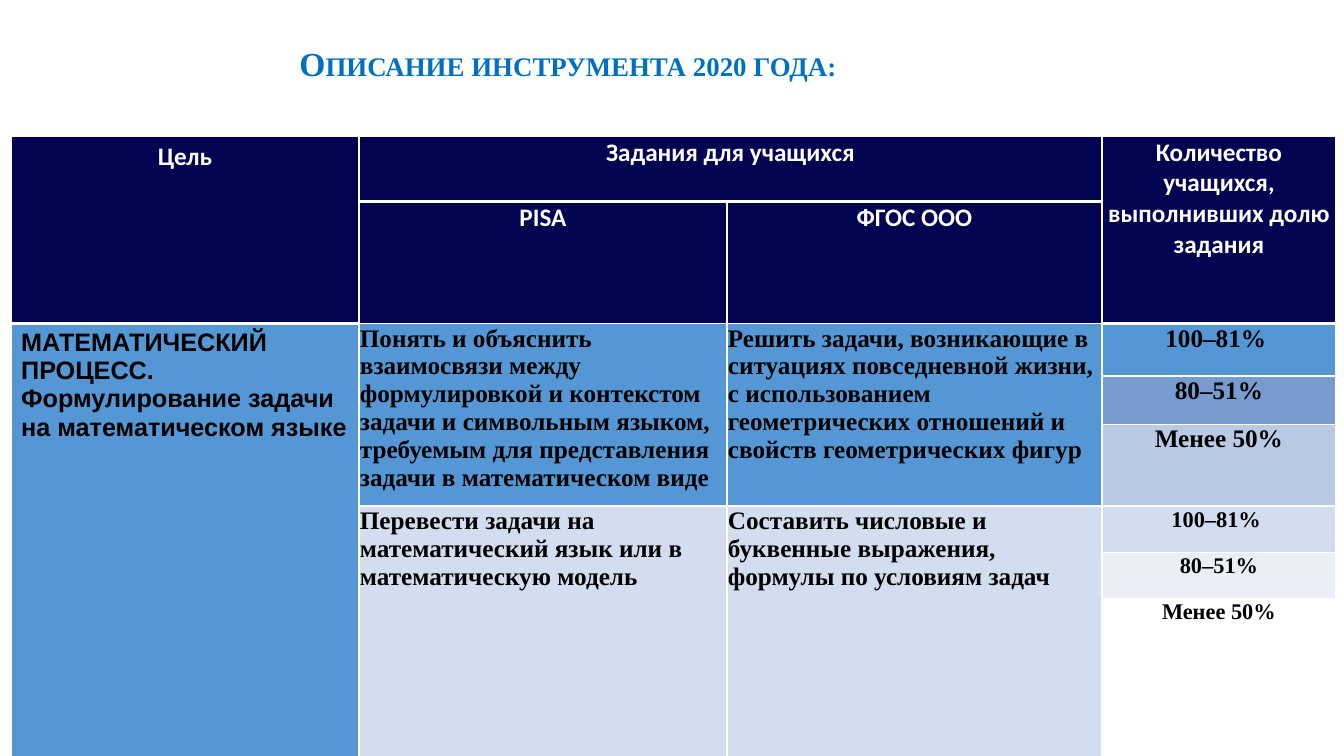
from lxml.etree import SubElement
from pptx import Presentation
from pptx.dml.color import RGBColor
from pptx.enum.text import MSO_ANCHOR, MSO_AUTO_SIZE, PP_ALIGN
from pptx.oxml.ns import qn
from pptx.util import Inches, Pt

TITLE = "Описание инструмента 2020 года:"
COLS = [3.45, 3.65, 3.72, 2.32]
ROWS = [0.65, 0.32, 0.52, 0.48, 0.59, 0.46, 0.46, 1.66]
NAVY, BLUE, PALE = "020452", "5497D4", "D2DEEF"
SERIF = "Times New Roman"
WIDE, TIGHT = (0.1, 0.05, 0.1, 0.05), (0.01, 0.01, 0.01, 0)

# row, column, rows spanned, columns spanned, fill, text
HEADERS = [
    (0, 0, 2, 1, NAVY, "Цель"),
    (0, 1, 1, 2, NAVY, "Задания для учащихся"),
    (0, 3, 2, 1, NAVY, "Количество учащихся, выполнивших долю задания"),
    (1, 1, 1, 1, NAVY, "PISA"),
    (1, 2, 1, 1, NAVY, "ФГОС ООО"),
]
GOAL = (2, 0, 6, 1, BLUE, "МАТЕМАТИЧЕСКИЙ ПРОЦЕСС.\n"
        "Формулирование задачи на математическом языке")
TASKS = [
    (2, 1, 3, 1, BLUE, "Понять и объяснить взаимосвязи между формулировкой и контекстом "
     "задачи и символьным языком, требуемым для представления задачи в математическом виде"),
    (2, 2, 3, 1, BLUE, "Решить задачи, возникающие в ситуациях повседневной жизни, "
     "с использованием геометрических отношений и свойств геометрических фигур"),
    (5, 1, 3, 1, PALE, "Перевести задачи на математический язык или в математическую модель"),
    (5, 2, 3, 1, PALE, "Составить числовые и буквенные выражения, формулы по условиям задач"),
]
SHARES = ["100–81% ", "80–51%", "Менее 50%"]
SHARE_GROUPS = [(2, 18, [BLUE, "779BCF", "BACAE4"]), (5, 16, [PALE, "EAEFF7", None])]


def rgb(color):
    return RGBColor.from_string(color)


def set_insets(box, insets):
    box.margin_left, box.margin_top, box.margin_right, box.margin_bottom = map(Inches, insets)


def set_borders(cell, bottom):
    tcPr = cell._tc.get_or_add_tcPr()
    for i, (side, width) in enumerate([("L", 1), ("R", 1), ("T", 1), ("B", bottom)]):
        ln = tcPr.makeelement(qn(f"a:ln{side}"), {"w": str(Pt(width))})
        SubElement(SubElement(ln, qn("a:solidFill")), qn("a:srgbClr"), val="FFFFFF")
        tcPr.insert(i, ln)


def fill_cell(table, entry, font, size=18, color="000000", align=PP_ALIGN.LEFT, insets=TIGHT):
    row, col, height, width, fill, text = entry
    cell = table.cell(row, col)
    if height * width > 1:
        cell.merge(table.cell(row + height - 1, col + width - 1))
    if fill:
        cell.fill.solid()
        cell.fill.fore_color.rgb = rgb(fill)
    else:
        cell.fill.background()
    set_insets(cell, insets)
    for r in range(row, row + height):
        for c in range(col, col + width):
            set_borders(table.cell(r, c), 3 if row == 0 else 1)
    cell.text_frame.text = text
    for p in cell.text_frame.paragraphs:
        p.alignment = align
        p.font.name, p.font.size, p.font.bold = font, Pt(size), True
        p.font.color.rgb = rgb(color)


prs = Presentation()
prs.slide_width, prs.slide_height = Inches(13.33), Inches(7.5)
s = prs.slides.add_slide(prs.slide_layouts[5])

title = s.shapes.title
title.left, title.top, title.width, title.height = map(Inches, (2.86, 0.41, 9.22, 0.48))
tf = title.text_frame
tf.word_wrap, tf.auto_size = True, MSO_AUTO_SIZE.SHAPE_TO_FIT_TEXT
tf.vertical_anchor = MSO_ANCHOR.TOP
set_insets(tf, (0.11, 0.06, 0.11, 0.06))
p = tf.paragraphs[0]
p.alignment, p.line_spacing = PP_ALIGN.LEFT, 0.9
r = p.add_run()
r.text = TITLE
r.font.name, r.font.size, r.font.bold = SERIF, Pt(24), True
r.font.color.rgb = rgb("0070C0")
r._r.get_or_add_rPr().set("cap", "small")

frame = s.shapes.add_table(len(ROWS), len(COLS), Inches(0.11), Inches(1.35),
                           Inches(13.13), Inches(5.6))
table = frame.table
for column, width in zip(table.columns, COLS):
    column.width = Inches(width)
for row, height in zip(table.rows, ROWS):
    row.height = Inches(height)

for entry in HEADERS:
    fill_cell(table, entry, "Calibri", color="FFFFFF", align=PP_ALIGN.CENTER,
              insets=WIDE if entry[1] == 0 else TIGHT)
fill_cell(table, GOAL, "Arial", insets=WIDE)
for entry in TASKS:
    fill_cell(table, entry, SERIF)
for first, size, fills in SHARE_GROUPS:
    for i, (share, fill) in enumerate(zip(SHARES, fills)):
        fill_cell(table, (first + i, 3, 1, 1, fill, share), SERIF, size, align=PP_ALIGN.CENTER)

prs.save("out.pptx")
